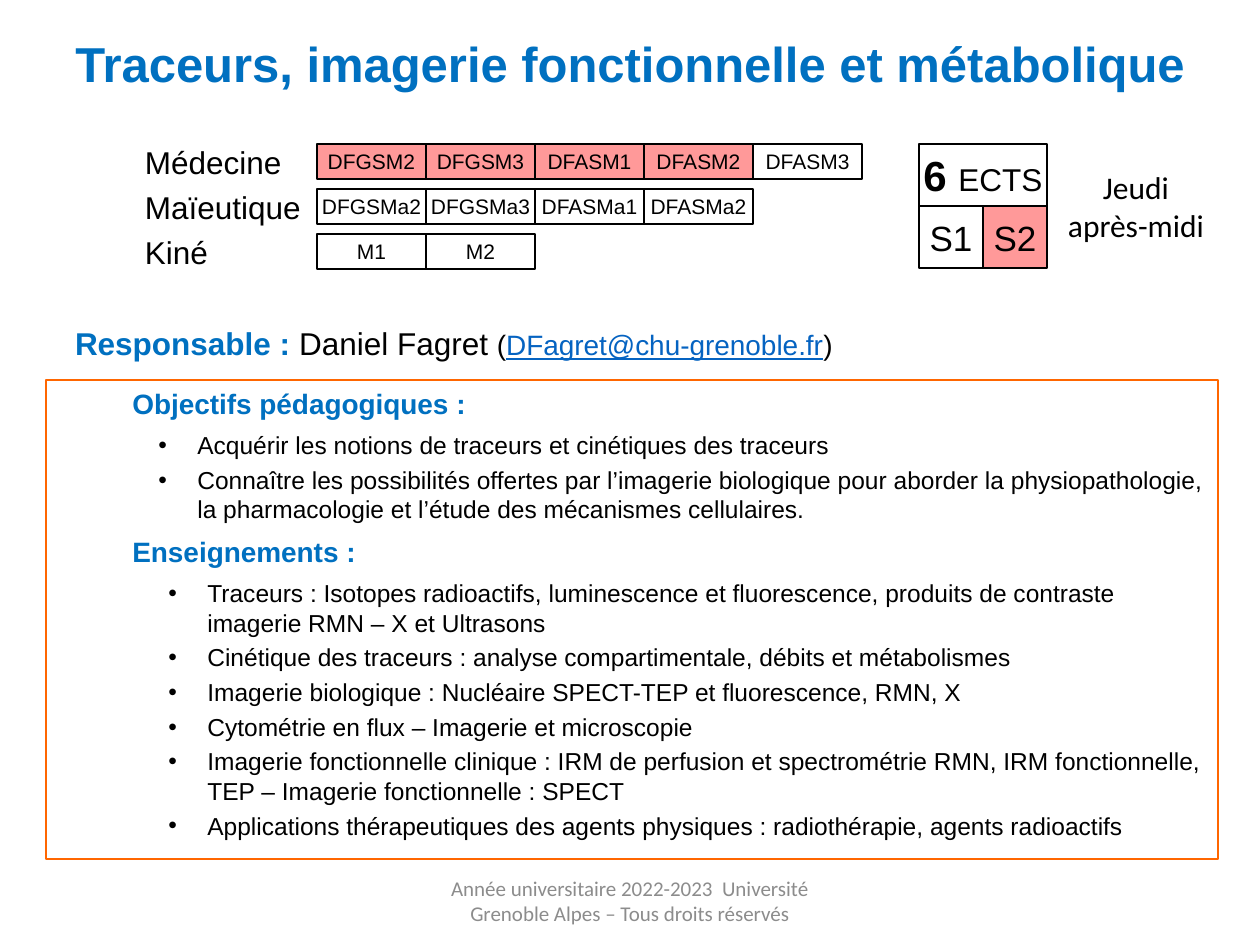
import pptx
import pptx.util
import pptx.dml.color
import pptx.enum.shapes
import pptx.enum.text
import lxml.etree

PX = 914400 / 126
ALIGN = pptx.enum.text.PP_ALIGN
ANCHOR = pptx.enum.text.MSO_ANCHOR
BLUE, PINK, WHITE, BLACK = "0070C0", "FF9999", "FFFFFF", "000000"

COURSES = [
    ("Médecine", ["DFGSM2", "DFGSM3", "DFASM1", "DFASM2", "DFASM3"], 4),
    ("Maïeutique", ["DFGSMa2", "DFGSMa3", "DFASMa1", "DFASMa2"], 0),
    ("Kiné", ["M1", "M2"], 0),
]
SECTIONS = [
    ("Objectifs pédagogiques :", 139, [
        "Acquérir les notions de traceurs et cinétiques des traceurs",
        "Connaître les possibilités offertes par l’imagerie biologique pour aborder "
        "la physiopathologie, la pharmacologie et l’étude des mécanismes cellulaires.",
    ]),
    ("Enseignements :", 149, [
        "Traceurs : Isotopes radioactifs, luminescence et fluorescence, produits de "
        "contraste imagerie RMN – X et Ultrasons",
        "Cinétique des traceurs : analyse compartimentale, débits et métabolismes",
        "Imagerie biologique : Nucléaire SPECT-TEP et fluorescence, RMN, X",
        "Cytométrie en flux – Imagerie et microscopie",
        "Imagerie fonctionnelle clinique : IRM de perfusion et spectrométrie RMN, "
        "IRM fonctionnelle, TEP – Imagerie fonctionnelle : SPECT",
        "Applications thérapeutiques des agents physiques : radiothérapie, agents radioactifs",
    ]),
]


def px(n):
    return int(n * PX)


def rgb(color):
    return pptx.dml.color.RGBColor.from_string(color)


def font(r, size, color=BLACK, bold=False, name="Arial"):
    r.font.size = pptx.util.Pt(size)
    r.font.name = name
    r.font.bold = bold
    r.font.color.rgb = rgb(color)


def frame(sp, inset=0, anchor=ANCHOR.MIDDLE, wrap=True):
    tf = sp.text_frame
    tf.margin_left = tf.margin_right = px(inset)
    tf.margin_top = tf.margin_bottom = px(inset / 2)
    tf.vertical_anchor = anchor
    tf.word_wrap = wrap
    return tf


def add_runs(p, parts):
    for text, *style in parts:
        r = p.add_run()
        r.text = text
        font(r, *style)


def label(s, x, y, w, h, parts, align=ALIGN.LEFT, wrap=True):
    sp = s.shapes.add_textbox(px(x), px(y), px(w), px(h))
    p = frame(sp, wrap=wrap).paragraphs[0]
    p.alignment = align
    add_runs(p, parts)
    return p


def box(s, x, y, w, h, fill=None, line=BLACK, width=1, parts=()):
    sp = s.shapes.add_shape(pptx.enum.shapes.MSO_SHAPE.RECTANGLE, px(x), px(y), px(w), px(h))
    sp.shadow.inherit = False
    if fill:
        sp.fill.solid()
        sp.fill.fore_color.rgb = rgb(fill)
    else:
        sp.fill.background()
    sp.line.color.rgb = rgb(line)
    sp.line.width = pptx.util.Pt(width)
    p = frame(sp, wrap=False).paragraphs[0]
    p.alignment = ALIGN.CENTER
    add_runs(p, parts)
    return sp


def title(s, x, y, w, h, text):
    sp = s.shapes.title
    sp.left, sp.top, sp.width, sp.height = px(x), px(y), px(w), px(h)
    tf = frame(sp)
    tf.text = text
    tf.paragraphs[0].alignment = ALIGN.CENTER
    font(tf.paragraphs[0].runs[0], 28, BLUE, True)


def course_grid(s, x, y):
    cell_w, cell_h, pitch = 109, 35, 45
    for row, (name, years, open_count) in enumerate(COURSES):
        top = y + row * pitch
        label(s, x, top, 160, cell_h, [(name, 18)])
        for col, year in enumerate(years):
            fill = PINK if col < open_count else WHITE
            box(s, x + 172 + col * cell_w, top, cell_w, cell_h, fill, parts=[(year, 12)])


def credits(s, x, y):
    half, h = 64, 62
    box(s, x, y, 2 * half, h, parts=[("6 ", 24, BLACK, True), ("ECTS", 18)])
    for i, (name, fill) in enumerate([("S1", WHITE), ("S2", PINK)]):
        box(s, x + i * half, y + h, half, h, fill, parts=[(name, 20)])
    label(s, x + 147, y + 17, 140, 90, [("Jeudi après-midi", 18, BLACK, False, "Calibri")],
          ALIGN.CENTER)


def contact(s, x, y, w, h):
    p = label(s, x, y, w, h, [
        ("Responsable : ", 18, BLUE, True), ("Daniel Fagret ", 18), ("(", 16),
        ("DFagret@chu-grenoble.fr", 16, "0563C1"), (")", 16)])
    p.runs[3].font.underline = True


def indent(p, left, hanging=0):
    pPr = p._p.get_or_add_pPr()
    pPr.set("marL", str(px(left)))
    pPr.set("indent", str(px(-hanging)))
    if hanging:
        ns = "{http://schemas.openxmlformats.org/drawingml/2006/main}"
        lxml.etree.SubElement(pPr, ns + "buFont").set("typeface", "Arial")
        lxml.etree.SubElement(pPr, ns + "buChar").set("char", "•")


def programme(s, x, y, w, h):
    sp = box(s, x, y, w, h, line="FF6600", width=1.5)
    tf = frame(sp, 12.6, ANCHOR.TOP)
    rows = []
    for heading, left, items in SECTIONS:
        rows.append((heading, 74, 0, 6, (16, BLUE, True)))
        rows += [(item, left, 39, 3 if i else 6, (14,)) for i, item in enumerate(items)]
    for i, (text, left, hanging, before, style) in enumerate(rows):
        p = tf.add_paragraph() if i else tf.paragraphs[0]
        p.text = text
        p.alignment = ALIGN.LEFT
        p.space_before = pptx.util.Pt(before)
        indent(p, left, hanging)
        font(p.runs[0], *style)


def footer(s, x, y, w, h):
    label(s, x, y, w, h, [("Année universitaire 2022-2023  Université Grenoble Alpes – "
                           "Tous droits réservés", 12, "8C8C8C", False, "Calibri")], ALIGN.CENTER)


def main():
    prs = pptx.Presentation()
    prs.slide_width, prs.slide_height = px(1260), px(945)
    s = prs.slides.add_slide(prs.slide_layouts[5])
    title(s, 0, 27, 1260, 72, "Traceurs, imagerie fonctionnelle et métabolique")
    course_grid(s, 145, 144)
    credits(s, 919, 144)
    contact(s, 75, 324, 1100, 38)
    programme(s, 46, 380, 1172, 479)
    footer(s, 430, 876, 400, 50)
    prs.save("out.pptx")


if __name__ == "__main__":
    main()
